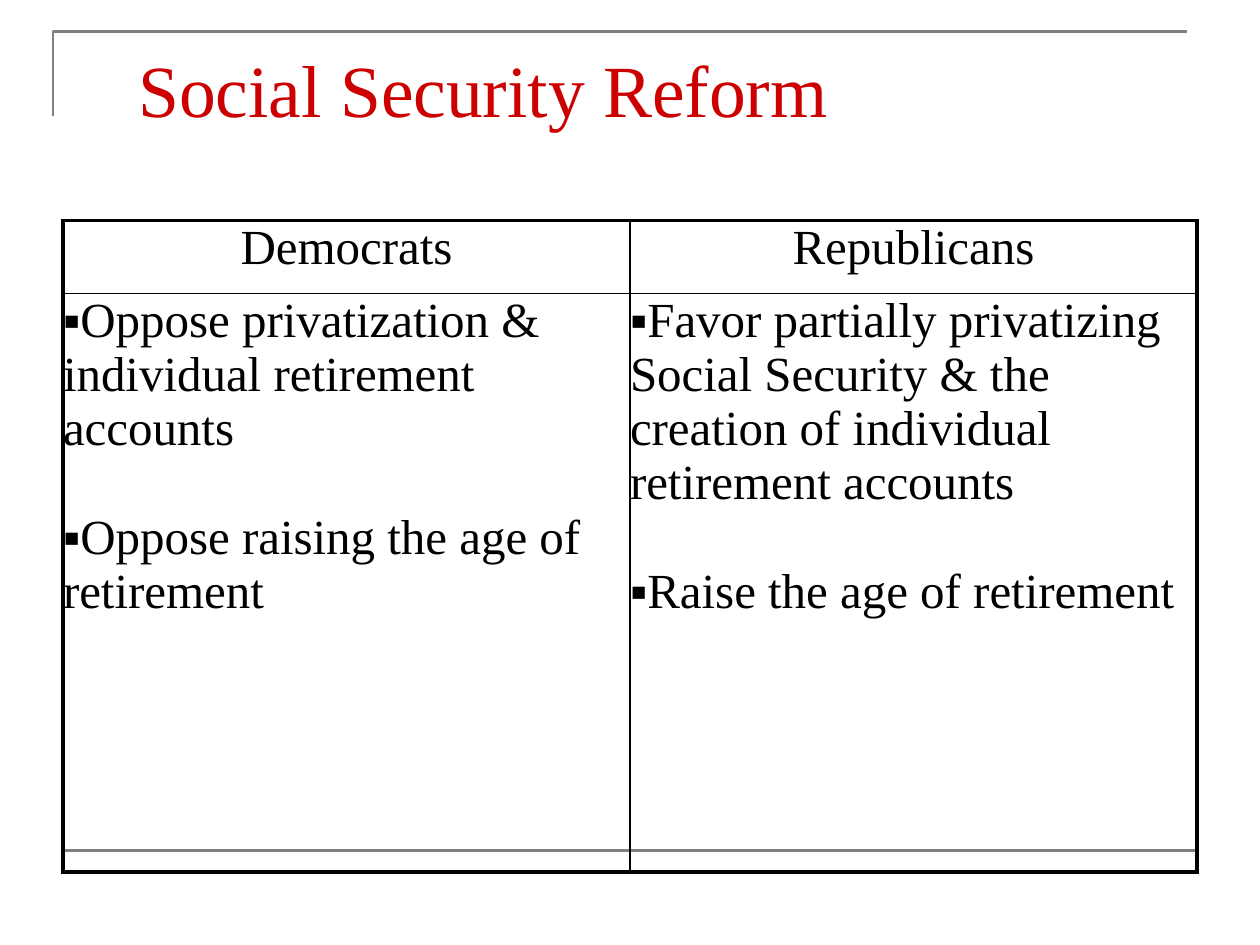
from dataclasses import dataclass

import pptx
import pptx.dml.color
import pptx.enum.shapes
import pptx.enum.text
import pptx.oxml
import pptx.oxml.ns
import pptx.util
from pptx.util import Inches, Pt

ALIGN = pptx.enum.text.PP_ALIGN


@dataclass(frozen=True)
class Theme:
    font: str = "Times New Roman"
    title_color: str = "CC0000"
    text_color: str = "000000"
    rule_color: str = "808080"
    title_size: float = 42
    body_size: float = 28
    point_gap: float = 31
    rule_width: float = 1.5
    outer_border: float = 2.25
    inner_border: float = 1


THEME = Theme()

POSITIONS = {
    "Democrats": [
        "Oppose privatization & individual retirement accounts",
        "Oppose raising the age of retirement",
    ],
    "Republicans": [
        "Favor partially privatizing Social Security & the creation of "
        "individual retirement accounts",
        "Raise the age of retirement",
    ],
}


def rgb(color):
    return pptx.dml.color.RGBColor.from_string(color)


def drawing_xml(markup):
    """Parse one DrawingML element whose tag is written as <a:tag ...>."""
    tag, rest = markup.split(" ", 1)
    return pptx.oxml.parse_xml(f"{tag} {pptx.oxml.ns.nsdecls('a')} {rest}")


def style_runs(paragraph, size, color):
    for run in paragraph.runs:
        run.font.name = THEME.font
        run.font.size = Pt(size)
        run.font.color.rgb = rgb(color)


def style_rule(rule):
    rule.line.color.rgb = rgb(THEME.rule_color)
    rule.line.width = Pt(THEME.rule_width)


def add_corner_frame(slide):
    builder = slide.shapes.build_freeform(Inches(0.42), Inches(0.92))
    builder.add_line_segments(
        [(Inches(0.42), Inches(0.25)), (Inches(9.42), Inches(0.25))], close=False
    )
    frame = builder.convert_to_shape()
    frame.fill.background()
    frame.shadow.inherit = False
    style_rule(frame)


def add_footer_rule(slide):
    rule = slide.shapes.add_connector(
        pptx.enum.shapes.MSO_CONNECTOR.STRAIGHT,
        Inches(0.5), Inches(6.75), Inches(9.5), Inches(6.75),
    )
    style_rule(rule)
    rule._element.spPr.append(drawing_xml("<a:effectLst />"))


def add_title(slide, text):
    title = slide.shapes.add_textbox(Inches(1), Inches(0.3), Inches(8.5), Inches(1.25))
    title.text_frame.word_wrap = True
    title.text_frame.text = text
    style_runs(title.text_frame.paragraphs[0], THEME.title_size, THEME.title_color)


def set_borders(cell, outer_sides):
    """Draw all four borders, heavier on the sides at the table's edge."""
    properties = cell._tc.get_or_add_tcPr()
    for position, side in enumerate("LRTB"):
        width = THEME.outer_border if side in outer_sides else THEME.inner_border
        border = drawing_xml(
            f'<a:ln{side} w="{Pt(width)}"><a:solidFill>'
            f'<a:srgbClr val="{THEME.text_color}"/></a:solidFill></a:ln{side}>'
        )
        properties.insert(position, border)


def fill_cell(cell, lines, outer_sides):
    cell.margin_left = cell.margin_right = cell.margin_top = cell.margin_bottom = 0
    cell.fill.background()
    set_borders(cell, outer_sides)
    cell.text_frame.text = "\n".join(lines)
    for paragraph in cell.text_frame.paragraphs:
        style_runs(paragraph, THEME.body_size, THEME.text_color)


def add_bullets(paragraphs):
    for number, paragraph in enumerate(paragraphs):
        if number:
            paragraph.space_before = Pt(THEME.point_gap)
        properties = paragraph._p.get_or_add_pPr()
        properties.set("marL", "0")
        properties.set("indent", "0")
        for markup in (
            f'<a:buClr ><a:srgbClr val="{THEME.text_color}"/></a:buClr>',
            f'<a:buFont typeface="{THEME.font}"/>',
            '<a:buChar char="▪"/>',
        ):
            properties.append(drawing_xml(markup))


def add_positions_table(slide, positions):
    table = slide.shapes.add_table(
        2, len(positions), Inches(0.5), Inches(1.75), Inches(9), Inches(5.17)
    ).table
    table.first_row = table.horz_banding = False
    table.rows[0].height = Inches(0.58)
    table.rows[1].height = Inches(4.59)

    for column, (party, points) in enumerate(positions.items()):
        edge = "L" if column == 0 else "R"
        header, body = table.cell(0, column), table.cell(1, column)
        fill_cell(header, [party], edge + "T")
        header.text_frame.paragraphs[0].alignment = ALIGN.CENTER
        fill_cell(body, points, edge + "B")
        add_bullets(body.text_frame.paragraphs)


def main():
    deck = pptx.Presentation()
    deck.slide_width, deck.slide_height = Inches(10), Inches(7.5)
    slide = deck.slides.add_slide(deck.slide_layouts[6])
    add_corner_frame(slide)
    add_footer_rule(slide)
    add_title(slide, "Social Security Reform")
    add_positions_table(slide, POSITIONS)
    deck.save("out.pptx")


if __name__ == "__main__":
    main()
